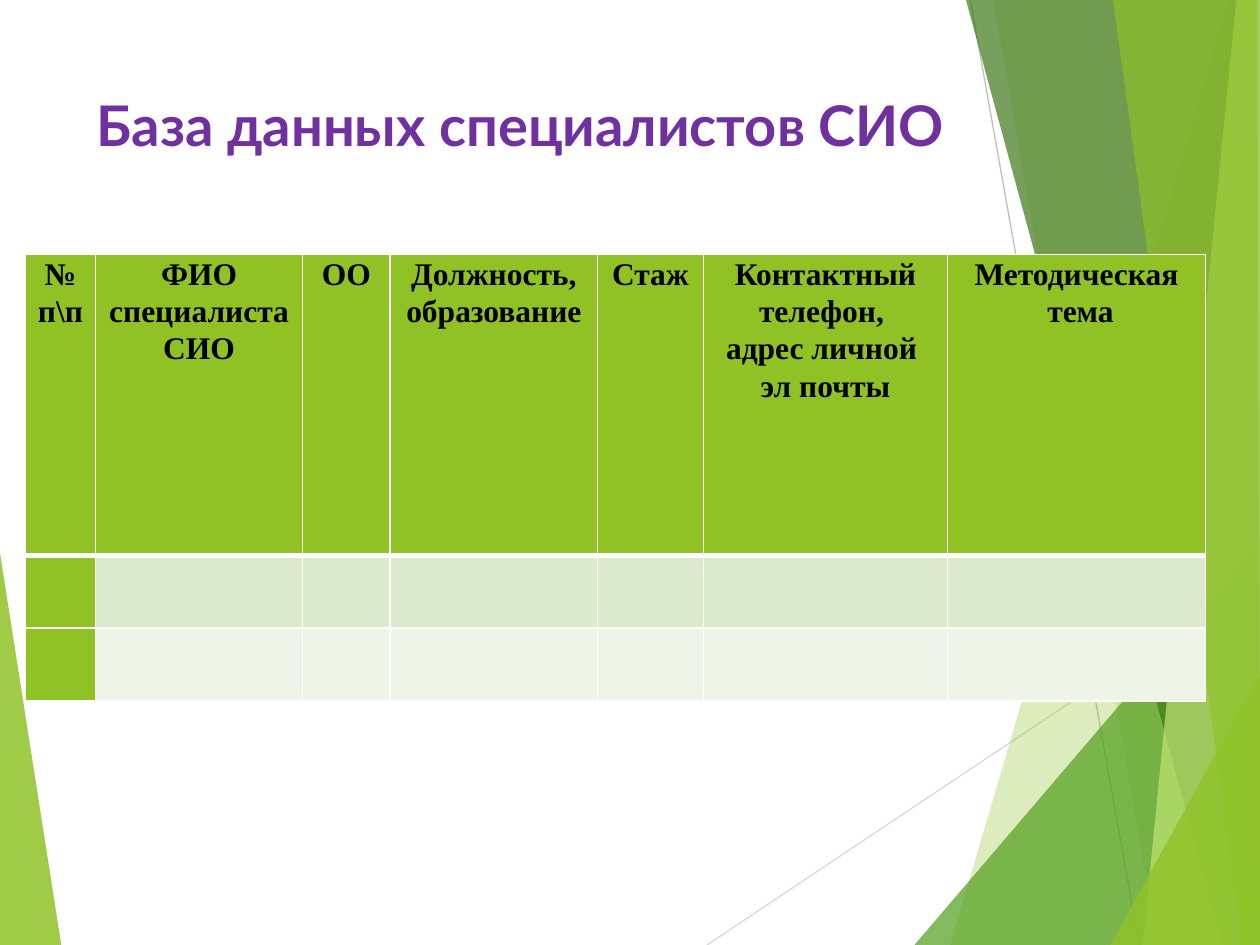
import pptx
import pptx.dml.color
import pptx.enum.shapes
import pptx.enum.text
import pptx.oxml.ns
import pptx.oxml.xmlchemy
import pptx.util

Pt = pptx.util.Pt
qn = pptx.oxml.ns.qn
OxmlElement = pptx.oxml.xmlchemy.OxmlElement

COLORS = {
    "white": "FFFFFF",
    "black": "000000",
    "title": "7030A0",
    "green": "90C226",
    "leaf": "54A021",
    "forest": "3F7819",
    "lime": "C0E474",
    "band_dark": "DBE9CD",
    "band_light": "EEF4E8",
    "ray_light": "D9D9D9",
    "ray_dark": "BFBFBF",
}

FACETS = [
    ("green", 85, [(0, 316), (35, 540), (0, 540)]),
    ("green", 30, [(702, 0), (543, 540), (720, 540), (720, 0)]),
    ("green", 20, [(567.5, 0), (661.5, 540), (720, 540), (720, 0)]),
    ("leaf", 72, [(522.5, 540), (720, 309), (720, 540)]),
    ("forest", 70, [(552, 0), (698.5, 540), (720, 540), (720, 0)]),
    ("lime", 70, [(706.5, 0), (653, 540), (720, 540), (720, 0)]),
    ("green", 65, [(636, 0), (710, 540), (720, 540), (718.5, 0)]),
    ("green", 80, [(634.5, 540), (720, 385), (720, 540)]),
]

RAYS = [
    ("ray_light", (404, 540), (720, 329)),
    ("ray_dark", (554.5, 0), (651, 540)),
]

HEADINGS = [
    "№ п\\п",
    "ФИО специалиста СИО",
    "ОО",
    "Должность,\nобразование",
    "Стаж",
    "Контактный телефон, \nадрес личной \nэл почты",
    "Методическая\n тема",
]
COLUMN_WIDTHS = [40, 118.5, 50, 118.5, 60.5, 139.5, 147.5]
ROW_HEIGHTS = [172, 41.5, 41.5]
ROW_FILLS = ["green", "band_dark", "band_light"]


def rgb(color):
    return pptx.dml.color.RGBColor.from_string(COLORS[color])


def write_text(frame, text, font, size, color, bold=True, align="LEFT", spacing=None):
    frame.text = text
    for paragraph in frame.paragraphs:
        paragraph.alignment = getattr(pptx.enum.text.PP_ALIGN, align)
        paragraph.line_spacing = spacing
        for run in paragraph.runs:
            run.font.name = font
            run.font.size = Pt(size)
            run.font.bold = bold
            run.font.color.rgb = rgb(color)


class SlideBuilder:
    title_font = "Lato"
    table_font = "Times New Roman"

    def __init__(self, slide):
        self.slide = slide

    def facet(self, color, opacity, corners):
        corners = [(Pt(x), Pt(y)) for x, y in corners]
        outline = self.slide.shapes.build_freeform(*corners[0])
        outline.add_line_segments(corners[1:], close=True)
        facet = outline.convert_to_shape()
        facet.shadow.inherit = False
        facet.line.fill.background()
        facet.fill.solid()
        facet.fill.fore_color.rgb = rgb(color)
        tint = facet.element.spPr.find(qn("a:solidFill")).find(qn("a:srgbClr"))
        alpha = OxmlElement("a:alpha")
        alpha.set("val", str(opacity * 1000))
        tint.append(alpha)

    def ray(self, color, start, end):
        ray = self.slide.shapes.add_connector(
            pptx.enum.shapes.MSO_CONNECTOR.STRAIGHT, *map(Pt, start + end)
        )
        ray.line.color.rgb = rgb(color)
        ray.line.width = Pt(0.75)
        ray.element.spPr.append(OxmlElement("a:effectLst"))

    def title(self, text, left, top, width, height):
        title = self.slide.shapes.title
        title.left, title.top = Pt(left), Pt(top)
        title.width, title.height = Pt(width), Pt(height)
        title.text_frame.word_wrap = True
        title.text_frame.vertical_anchor = pptx.enum.text.MSO_ANCHOR.TOP
        write_text(title.text_frame, text, font=self.title_font, size=32, color="title")

    def borders(self, cell, **widths):
        properties = cell._tc.get_or_add_tcPr()
        for side in ("L", "R", "T", "B"):
            border = OxmlElement("a:ln" + side)
            border.set("w", str(Pt(widths.get(side, 1))))
            fill = OxmlElement("a:solidFill")
            tint = OxmlElement("a:srgbClr")
            tint.set("val", COLORS["white"])
            fill.append(tint)
            border.append(fill)
            properties.append(border)

    def table(self, left, top):
        table = self.slide.shapes.add_table(
            len(ROW_HEIGHTS), len(COLUMN_WIDTHS), Pt(left), Pt(top),
            Pt(sum(COLUMN_WIDTHS)), Pt(sum(ROW_HEIGHTS)),
        ).table
        table.first_col = True
        for column, width in zip(table.columns, COLUMN_WIDTHS):
            column.width = Pt(width)
        for row_index, (row, height) in enumerate(zip(table.rows, ROW_HEIGHTS)):
            row.height = Pt(height)
            for column_index, cell in enumerate(row.cells):
                self.borders(cell, **{0: {"B": 3}, 1: {"T": 3}}.get(row_index, {}))
                cell.fill.solid()
                fill = "green" if column_index == 0 else ROW_FILLS[row_index]
                cell.fill.fore_color.rgb = rgb(fill)
        for cell, heading in zip(table.rows[0].cells, HEADINGS):
            cell.margin_left = cell.margin_right = Pt(5)
            cell.margin_top = cell.margin_bottom = 0
            write_text(cell.text_frame, heading, font=self.table_font, size=18,
                       color="black", align="CENTER", spacing=1.07)


def main():
    presentation = pptx.Presentation()
    presentation.slide_width = Pt(720)
    presentation.slide_height = Pt(540)
    builder = SlideBuilder(presentation.slides.add_slide(presentation.slide_layouts[5]))
    builder.facet(*FACETS[0])
    for ray in RAYS:
        builder.ray(*ray)
    for facet in FACETS[1:]:
        builder.facet(*facet)
    builder.title("База данных специалистов СИО", 48, 48, 500, 104)
    builder.table(14.5, 145.5)
    presentation.save("out.pptx")


if __name__ == "__main__":
    main()
